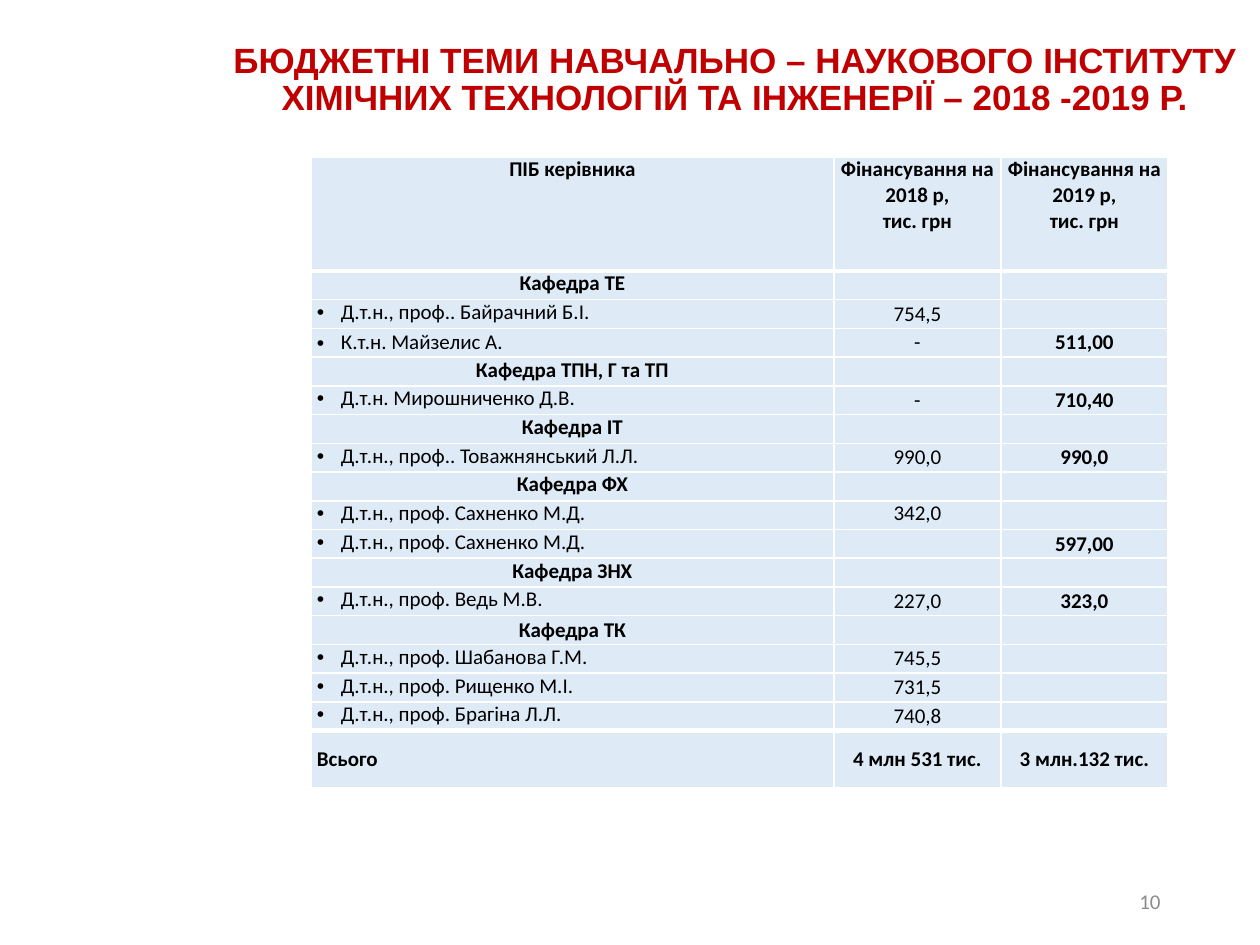
"""Build the slide on budget-funded research topics of the institute."""
from dataclasses import dataclass

import lxml.etree
import pptx
import pptx.dml.color
import pptx.enum.text
import pptx.oxml.ns
import pptx.util

ALIGN = pptx.enum.text.PP_ALIGN
ANCHOR = pptx.enum.text.MSO_ANCHOR
EMU_PER_PX = 914400 // 126


@dataclass(frozen=True)
class Theme:
    title_font: str = "Arial"
    body_font: str = "Calibri"
    title_size: int = 20
    body_size: int = 12
    title_color: str = "C00000"
    text_color: str = "000000"
    number_color: str = "8C8C8C"
    cell_color: str = "DEEBF7"
    border_color: str = "FFFFFF"
    thin_border: int = 1
    thick_border: int = 3


@dataclass(frozen=True)
class Box:
    left: int
    top: int
    width: int
    height: int


@dataclass(frozen=True)
class TextStyle:
    font: str
    size: int
    color: str
    bold: bool = False
    align: ALIGN = ALIGN.CENTER
    anchor: ANCHOR = ANCHOR.MIDDLE
    bullet: bool = False


@dataclass(frozen=True)
class Department:
    name: str
    anchor: ANCHOR = ANCHOR.TOP


@dataclass(frozen=True)
class Leader:
    name: str
    funding_2018: str = ""
    funding_2019: str = ""
    name_anchor: ANCHOR = ANCHOR.TOP
    funding_anchor: ANCHOR = ANCHOR.MIDDLE


THEME = Theme()
TITLE = "БЮДЖЕТНІ ТЕМИ НАВЧАЛЬНО – НАУКОВОГО ІНСТИТУТУ ХІМІЧНИХ ТЕХНОЛОГІЙ ТА ІНЖЕНЕРІЇ – 2018 -2019 Р."
HEADER = ("ПІБ керівника", "Фінансування на 2018 р,\nтис. грн", "Фінансування на 2019 р,\nтис. грн")
TOTALS = ("Всього", "4 млн 531 тис.", "3 млн.132 тис.")
ENTRIES = (
    Department("Кафедра ТЕ"),
    Leader("Д.т.н., проф.. Байрачний Б.І.", "754,5"),
    Leader("К.т.н. Майзелис А.", "-", "511,00", name_anchor=ANCHOR.MIDDLE),
    Department("Кафедра ТПН, Г та ТП"),
    Leader("Д.т.н. Мирошниченко Д.В.", "-", "710,40"),
    Department("Кафедра ІТ"),
    Leader("Д.т.н., проф.. Товажнянський Л.Л.", "990,0", "990,0"),
    Department("Кафедра ФХ"),
    Leader("Д.т.н., проф. Сахненко М.Д.", "342,0", funding_anchor=ANCHOR.TOP),
    Leader("Д.т.н., проф. Сахненко М.Д.", "", "597,00"),
    Department("Кафедра ЗНХ"),
    Leader("Д.т.н., проф. Ведь М.В.", "227,0", "323,0"),
    Department("Кафедра ТК", ANCHOR.MIDDLE),
    Leader("Д.т.н., проф. Шабанова Г.М.", "745,5"),
    Leader("Д.т.н., проф. Рищенко М.І.", "731,5"),
    Leader("Д.т.н., проф. Брагіна Л.Л.", "740,8"),
)
TABLE_BOX = Box(311, 157, 857, 631)
COLUMN_WIDTHS = (523, 167, 167)
HEADER_HEIGHT, ENTRIES_HEIGHT, TOTAL_HEIGHT = 114, 460, 57
CELL_INSET, BULLET_INDENT = 6, 24


def px(length: int) -> pptx.util.Emu:
    """Convert px to EMU."""
    return pptx.util.Emu(length * EMU_PER_PX)


def rgb(color: str) -> pptx.dml.color.RGBColor:
    """Turn a hex string into a colour."""
    return pptx.dml.color.RGBColor.from_string(color)


def add_element(parent, tag: str, **attributes: str):
    """Append a DrawingML element."""
    return lxml.etree.SubElement(parent, pptx.oxml.ns.qn(tag), attributes)


def write_text(text_frame, text: str, style: TextStyle) -> None:
    """Fill a text frame and format its paragraphs."""
    text_frame.text = text
    for paragraph in text_frame.paragraphs:
        paragraph.alignment = style.align
        if style.bullet:
            properties = paragraph._p.get_or_add_pPr()
            properties.set("marL", str(px(BULLET_INDENT)))
            properties.set("indent", str(-px(BULLET_INDENT)))
            add_element(properties, "a:buFont", typeface="Arial")
            add_element(properties, "a:buChar", char="•")
        for run in paragraph.runs:
            run.font.name = style.font
            run.font.size = pptx.util.Pt(style.size)
            run.font.bold = style.bold
            run.font.color.rgb = rgb(style.color)
        if not paragraph.runs:
            add_element(paragraph._p, "a:endParaRPr", sz=str(style.size * 100))


def add_text(slide, box: Box, text: str, style: TextStyle):
    """Add a wrapping text box and return its text frame."""
    shape = slide.shapes.add_textbox(px(box.left), px(box.top), px(box.width), px(box.height))
    text_frame = shape.text_frame
    text_frame.word_wrap = True
    text_frame.vertical_anchor = style.anchor
    write_text(text_frame, text, style)
    return text_frame


def cell_style(**changes) -> TextStyle:
    """Return the table text style with changes."""
    return TextStyle(THEME.body_font, THEME.body_size, THEME.text_color, **changes)


def fill_cell(cell, text: str, style: TextStyle, thick_sides: str) -> None:
    """Set borders, fill, margins and text of a cell."""
    properties = cell._tc.get_or_add_tcPr()
    for side in "LRTB":
        width = THEME.thick_border if side in thick_sides else THEME.thin_border
        line = add_element(properties, f"a:ln{side}", w=str(pptx.util.Pt(width)))
        add_element(add_element(line, "a:solidFill"), "a:srgbClr", val=THEME.border_color)
    cell.fill.solid()
    cell.fill.fore_color.rgb = rgb(THEME.cell_color)
    cell.margin_left = cell.margin_right = px(CELL_INSET)
    cell.margin_top = cell.margin_bottom = 0
    cell.vertical_anchor = style.anchor
    write_text(cell.text_frame, text, style)


def entry_cells(entry: Department | Leader) -> list[tuple[str, TextStyle]]:
    """Return the text and style of each cell in a body row."""
    if isinstance(entry, Department):
        return [(entry.name, cell_style(bold=True, anchor=entry.anchor)), ("", cell_style()), ("", cell_style())]
    return [
        (entry.name, cell_style(align=ALIGN.LEFT, anchor=entry.name_anchor, bullet=True)),
        (entry.funding_2018, cell_style(anchor=entry.funding_anchor)),
        (entry.funding_2019, cell_style(bold=True)),
    ]


def add_funding_table(slide) -> None:
    """Add the table of leaders and their funding."""
    header = [(text, cell_style(bold=True, anchor=ANCHOR.TOP)) for text in HEADER]
    totals = [(text, cell_style(bold=True, align=align))
              for text, align in zip(TOTALS, (ALIGN.LEFT, ALIGN.CENTER, ALIGN.CENTER))]
    rows = [header, *map(entry_cells, ENTRIES), totals]
    entry_height = px(ENTRIES_HEIGHT) // len(ENTRIES)
    heights = [px(HEADER_HEIGHT), *[entry_height] * len(ENTRIES), px(TOTAL_HEIGHT)]
    thick_sides = {0: "B", 1: "T", len(rows) - 2: "B", len(rows) - 1: "T"}
    box = TABLE_BOX
    table = slide.shapes.add_table(len(rows), len(HEADER), px(box.left), px(box.top),
                                   px(box.width), px(box.height)).table
    table.first_row = table.horz_banding = False
    for column, width in zip(table.columns, COLUMN_WIDTHS):
        column.width = px(width)
    for index, (cells, height) in enumerate(zip(rows, heights)):
        table.rows[index].height = height
        for column_index, (text, style) in enumerate(cells):
            fill_cell(table.cell(index, column_index), text, style, thick_sides.get(index, ""))


def main() -> None:
    """Build and save the presentation."""
    presentation = pptx.Presentation()
    presentation.slide_width, presentation.slide_height = px(1260), px(945)
    slide = presentation.slides.add_slide(presentation.slide_layouts[6])
    title_style = TextStyle(THEME.title_font, THEME.title_size, THEME.title_color, bold=True)
    title_frame = add_text(slide, Box(210, 0, 1050, 205), TITLE, title_style)
    title_frame.margin_bottom = px(50)
    title_frame.paragraphs[0].line_spacing = 0.9
    add_funding_table(slide)
    number_style = TextStyle(THEME.body_font, THEME.body_size, THEME.number_color, align=ALIGN.RIGHT)
    add_text(slide, Box(890, 876, 283, 50), "10", number_style)
    presentation.save("out.pptx")


if __name__ == "__main__":
    main()
